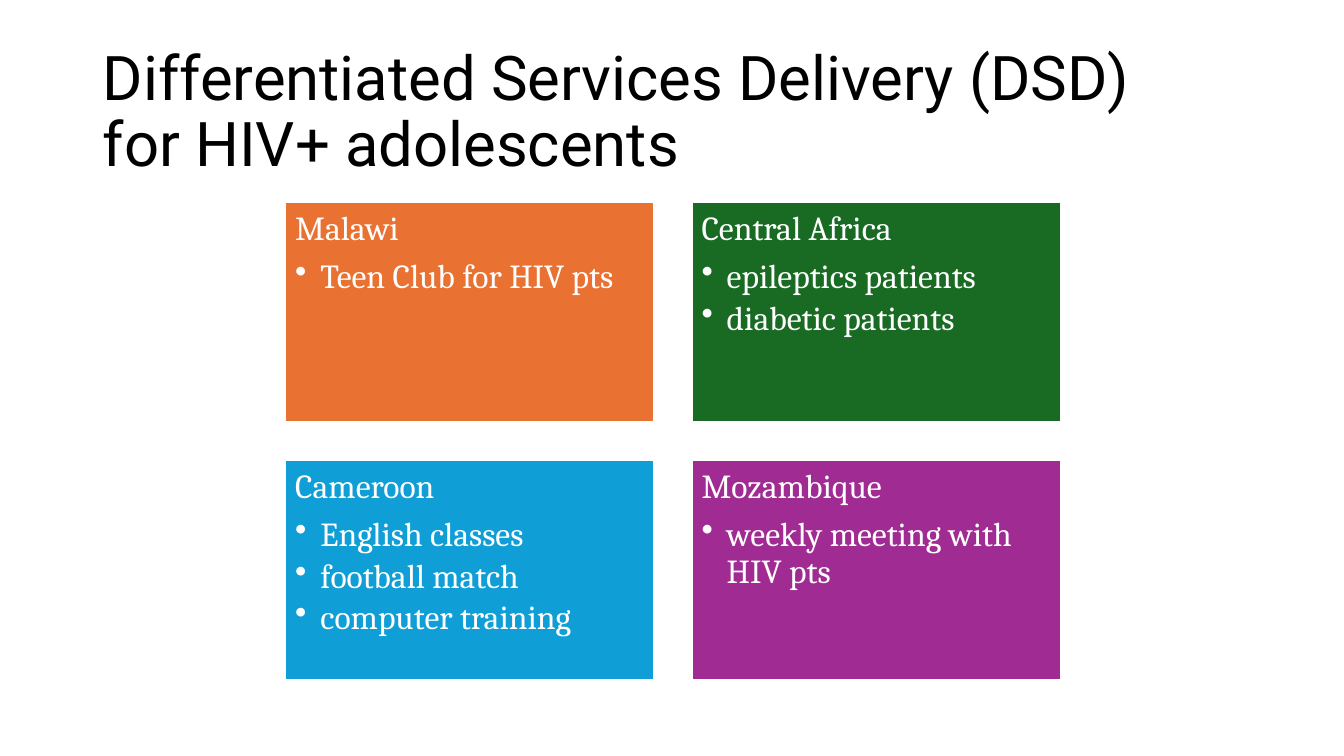
from pptx import Presentation
from pptx.dml.color import RGBColor
from pptx.enum.shapes import MSO_SHAPE as Shape
from pptx.enum.text import MSO_ANCHOR as Anchor, PP_ALIGN as Align
from pptx.oxml.xmlchemy import OxmlElement
from pptx.util import Inches, Pt


def color(value):
    return RGBColor.from_string(value)


def set_format(target, values):
    for name, value in values.items():
        setattr(target, name, value)


class CountrySlide:
    title_font = {"name": "Roboto", "size": Pt(44)}
    card_font = {"name": "Cambria", "size": Pt(24)}
    title_color = "000000"
    card_color = "FFFFFF"
    indent = 0.25

    def __init__(self, deck):
        self.page = deck.slides.add_slide(deck.slide_layouts[6])

    def frame(self, box, anchor, side, edge):
        set_format(box.text_frame, {
            "word_wrap": True, "vertical_anchor": anchor,
            "margin_left": Inches(side), "margin_right": Inches(side),
            "margin_top": Inches(edge), "margin_bottom": Inches(edge),
        })
        return box.text_frame

    def line(self, para, text, font, ink, after=0):
        para.text = text
        set_format(para, {"alignment": Align.LEFT, "line_spacing": 0.9,
                          "space_before": Pt(0), "space_after": Pt(after)})
        for span in para.runs:
            set_format(span.font, font)
            span.font.color.rgb = color(ink)

    def bullet(self, para):
        properties = para._p.get_or_add_pPr()
        properties.set("marL", str(Inches(self.indent)))
        properties.set("indent", str(-Inches(self.indent)))
        mark = OxmlElement("a:buChar")
        mark.set("char", "•")
        properties.append(mark)

    def title(self, text, left, top, width, height):
        box = self.page.shapes.add_textbox(
            Inches(left), Inches(top), Inches(width), Inches(height))
        frame = self.frame(box, Anchor.MIDDLE, 0.1, 0.05)
        self.line(frame.paragraphs[0], text, self.title_font, self.title_color)

    def card(self, country, services, fill, left, top, width, height):
        box = self.page.shapes.add_shape(
            Shape.RECTANGLE, Inches(left), Inches(top), Inches(width), Inches(height))
        box.shadow.inherit = False
        box.fill.solid()
        box.fill.fore_color.rgb = color(fill)
        box.line.color.rgb = color("FFFFFF")
        box.line.width = Pt(1.5)
        frame = self.frame(box, Anchor.TOP, 0.1, 0.1)
        self.line(frame.paragraphs[0], country, self.card_font, self.card_color, 8.4)
        for service in services:
            para = frame.add_paragraph()
            self.line(para, service, self.card_font, self.card_color, 3.6)
            self.bullet(para)


COUNTRIES = [
    ("Malawi", ["Teen Club for HIV pts"], "E97132"),
    ("Central Africa", ["epileptics patients", "diabetic patients"], "196B24"),
    ("Cameroon", ["English classes", "football match", "computer training"], "0F9ED5"),
    ("Mozambique", ["weekly meeting with HIV pts"], "A02B93"),
]


def main():
    deck = Presentation()
    deck.slide_width, deck.slide_height = Inches(13.33), Inches(7.5)
    slide = CountrySlide(deck)
    width, height, gap = 3.66, 2.19, 0.37
    for index, (country, services, fill) in enumerate(COUNTRIES):
        row, column = divmod(index, 2)
        slide.card(country, services, fill, 2.83 + column * (width + gap),
                   2 + row * (height + gap), width, height)
    slide.title("Differentiated Services Delivery (DSD)\nfor HIV+ adolescents",
                0.92, 0.4, 11.5, 1.45)
    deck.save("out.pptx")


if __name__ == "__main__":
    main()
